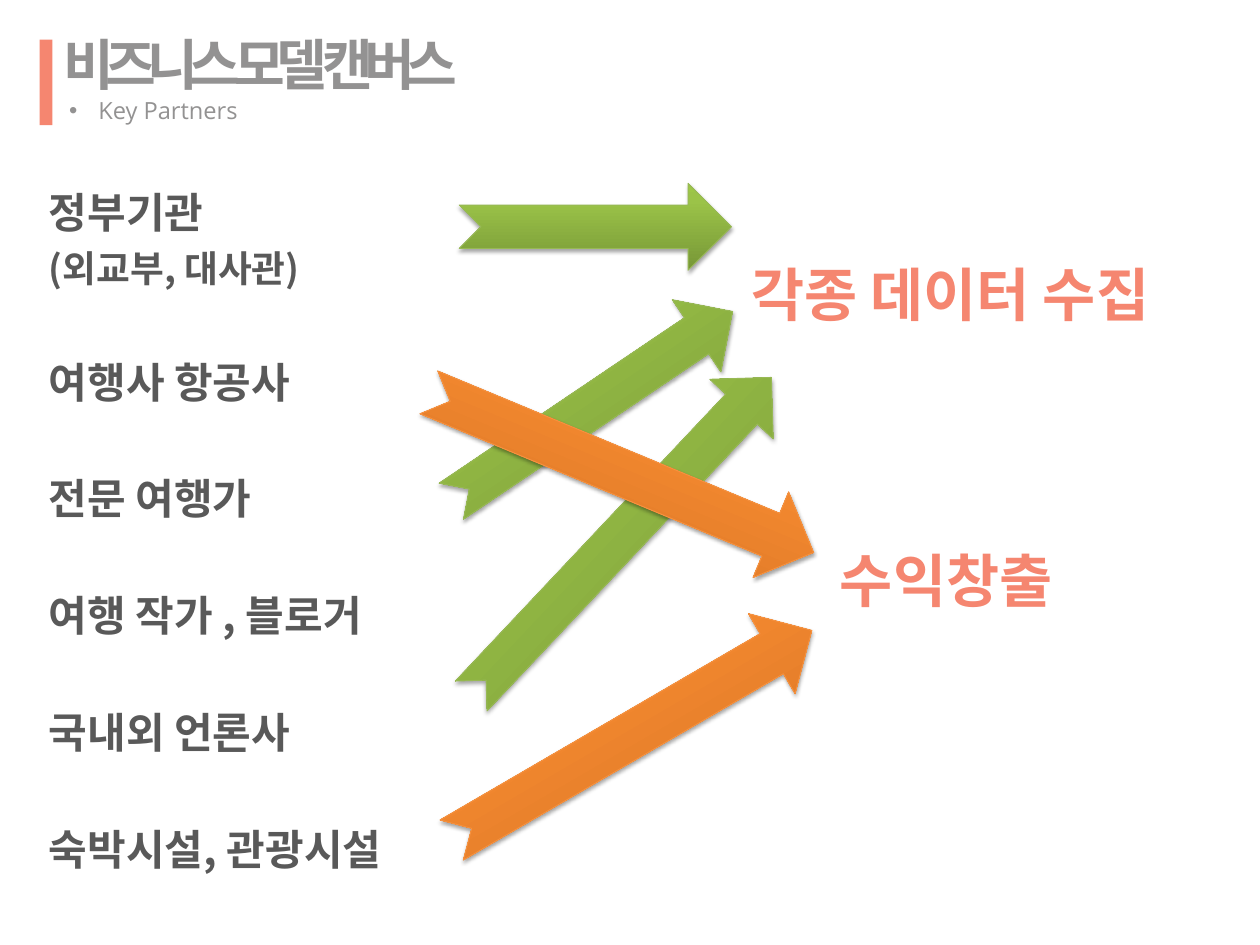
from lxml.etree import SubElement
from pptx import Presentation
from pptx.dml.color import RGBColor
from pptx.enum.shapes import MSO_SHAPE
from pptx.oxml import parse_xml
from pptx.oxml.ns import nsdecls, qn
from pptx.util import Pt

CORAL = RGBColor(0xF5, 0x86, 0x70)
TITLE_GRAY = RGBColor(0x93, 0x92, 0x92)
TEXT_GRAY = RGBColor(0x59, 0x59, 0x59)
GREEN_LINE = RGBColor(0x98, 0xB9, 0x55)
ORANGE_LINE = RGBColor(0xF6, 0x92, 0x40)
# Gradient stops: position in percent, colour
GREEN = [(0, RGBColor(0x77, 0x97, 0x37)), (80, RGBColor(0x9B, 0xC3, 0x48)),
         (100, RGBColor(0x9D, 0xC7, 0x46))]
ORANGE = [(0, RGBColor(0xCC, 0x6E, 0x20)), (80, RGBColor(0xFF, 0x90, 0x34)),
          (100, RGBColor(0xFF, 0x91, 0x36))]
KOREAN_FONT = "Noto Sans CJK KR"

# Content
TITLE = "비즈니스 모델 캔버스"
SUBTITLE = "Key Partners"
# Partners: text, size, space before
PARTNERS = [
    ("정부기관", 32, 0),
    ("(외교부, 대사관)", 28, 3.5),
    ("여행사 항공사", 32, 52),
    ("전문 여행가", 32, 52),
    ("여행 작가 , 블로거", 32, 52),
    ("국내외 언론사", 32, 52),
    ("숙박시설, 관광시설", 32, 52),
]
# Each goal: text, box, arrow colours, arrows (left, top, width, height, rotation)
GOALS = [
    ("각종 데이터 수집", (565.2, 193.7, 357, 60.5), GREEN, GREEN_LINE, [
        (349.9, 139.7, 207.4, 66.2, 0),
        (321.8, 276.5, 258.5, 66.2, 326),
        (306.7, 375.8, 333.4, 66.2, 313.3),
    ]),
    ("수익창출", (632.9, 411.8, 192.2, 60.5), ORANGE, ORANGE_LINE, [
        (314.6, 324.7, 317.5, 70.6, 22.6),
        (322.6, 524.9, 317.5, 70.6, 329.8),
    ]),
]


def add_box(page, area, wrap=True):
    box = page.shapes.add_textbox(*(Pt(value) for value in area))
    box.text_frame.word_wrap = wrap
    return box.text_frame


def add_span(para, text, font, size, color, bold=True):
    span = para.add_run()
    span.text = text
    span.font.name = font
    span.font.size = Pt(size)
    span.font.bold = bold
    span.font.color.rgb = color
    SubElement(span.font._element, qn("a:ea")).set("typeface", KOREAN_FONT)
    return span


def add_arrow(page, area, rotation, stops, line_color):
    arrow = page.shapes.add_shape(MSO_SHAPE.NOTCHED_RIGHT_ARROW,
                                  *(Pt(value) for value in area))
    arrow.rotation = rotation
    arrow.fill.gradient()
    arrow.fill.gradient_angle = 90
    stop_list = arrow._element.spPr.find(qn("a:gradFill")).find(qn("a:gsLst"))
    for old in list(stop_list):
        stop_list.remove(old)
    for position, color in stops:
        stop = SubElement(stop_list, qn("a:gs"), pos=str(position * 1000))
        SubElement(stop, qn("a:srgbClr"), val=str(color))
    arrow.line.color.rgb = line_color
    arrow.line.width = Pt(0.75)
    # Soft shadow straight below
    arrow._element.spPr.append(parse_xml(
        f'<a:effectLst {nsdecls("a")}>'
        f'<a:outerShdw blurRad="{Pt(3.1)}" dist="{Pt(1.8)}" dir="5400000" rotWithShape="0">'
        '<a:srgbClr val="000000"><a:alpha val="35000"/></a:srgbClr>'
        '</a:outerShdw></a:effectLst>'))


deck = Presentation()
deck.slide_width, deck.slide_height = Pt(960), Pt(720)
page = deck.slides.add_slide(deck.slide_layouts[6])

# Heading with a bulleted subtitle
heading = add_box(page, (47.5, 24.5, 468.7, 70.6))
heading.margin_left = heading.margin_right = 0
heading.margin_top = heading.margin_bottom = 0
para = heading.paragraphs[0]
para.line_spacing = Pt(49.4)
para._p.get_or_add_pPr().set("marL", str(Pt(0.7)))
span = add_span(para, TITLE, "Arial", 42, TITLE_GRAY)
span.font._element.set("spc", "-670")
para = heading.add_paragraph()
para.line_spacing = Pt(20.6)
properties = para._p.get_or_add_pPr()
properties.set("marL", str(Pt(27.4)))
properties.set("indent", str(Pt(-22.3)))
SubElement(properties, qn("a:buFont")).set("typeface", "Arial")
SubElement(properties, qn("a:buChar")).set("char", "•")
add_span(para, SUBTITLE, "Open Sans", 18, TITLE_GRAY, bold=False)

# Accent bar
bar = page.shapes.add_shape(MSO_SHAPE.RECTANGLE, Pt(30.2), Pt(30.2), Pt(9.8), Pt(65.2))
bar.shadow.inherit = False
bar.fill.solid()
bar.fill.fore_color.rgb = CORAL
bar.line.fill.background()

# Partner list
partners = add_box(page, (30.2, 139.7, 304.6, 538.6))
for index, (text, size, gap) in enumerate(PARTNERS):
    para = partners.add_paragraph() if index else partners.paragraphs[0]
    para.line_spacing = Pt(37)
    para.space_before = Pt(gap)
    add_span(para, text, KOREAN_FONT, size, TEXT_GRAY)

# Arrows and the goals they lead to
for text, area, stops, line_color, arrows in GOALS:
    for *arrow_area, rotation in arrows:
        add_arrow(page, arrow_area, rotation, stops, line_color)
    goal = add_box(page, area, wrap=False)
    add_span(goal.paragraphs[0], text, "Arial", 44, CORAL)

deck.save("out.pptx")
